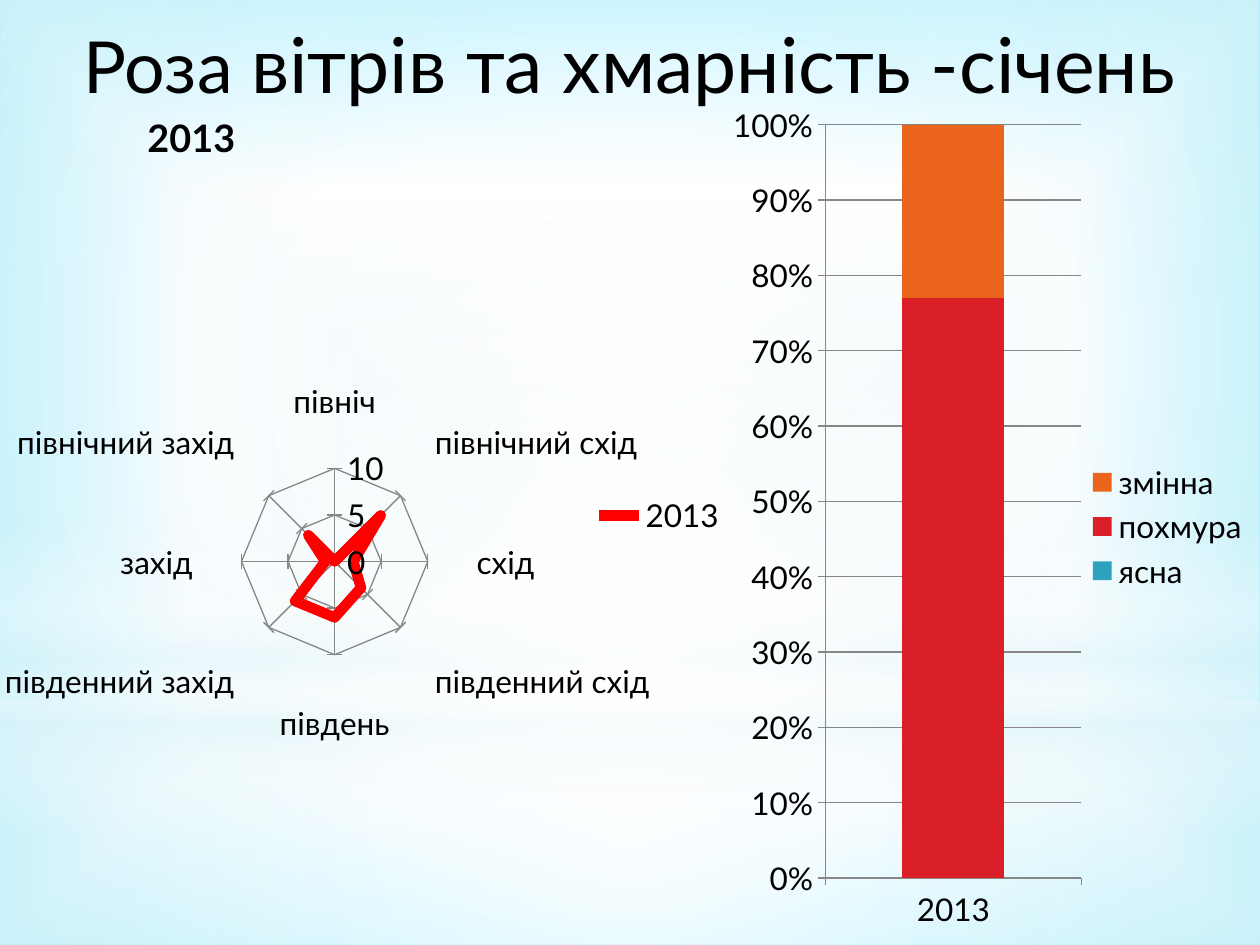
from lxml.etree import SubElement
from pptx import Presentation
from pptx.chart.data import CategoryChartData
from pptx.dml.color import RGBColor
from pptx.enum.chart import XL_CHART_TYPE, XL_LEGEND_POSITION, XL_TICK_MARK
from pptx.enum.shapes import MSO_SHAPE
from pptx.enum.text import MSO_ANCHOR, MSO_AUTO_SIZE, PP_ALIGN
from pptx.oxml.ns import qn
from pptx.oxml.xmlchemy import OxmlElement
from pptx.util import Inches, Pt

BLACK = RGBColor(0x00, 0x00, 0x00)
WHITE = RGBColor(0xFF, 0xFF, 0xFF)
GRAY = RGBColor(0x87, 0x87, 0x87)
RED = RGBColor(0xFF, 0x00, 0x00)
TEAL = RGBColor(0x2D, 0xA2, 0xBF)
CRIMSON = RGBColor(0xDA, 0x1F, 0x28)
ORANGE = RGBColor(0xEB, 0x64, 0x1B)
PALE = RGBColor(0xDE, 0xF5, 0xFA)
MIST = RGBColor(0xCD, 0xEF, 0xF7)
SKY = RGBColor(0x7C, 0xE7, 0xFF)


class SlideBuilder:
    font = "Lato"
    chart_size = Pt(18)

    def __init__(self, deck):
        self.page = deck.slides.add_slide(deck.slide_layouts[5])

    def paint(self, fill, properties, stops, shade=None):
        fill.solid()
        gradient = OxmlElement("a:gradFill")
        gradient.set("rotWithShape", "1")
        stop_list = SubElement(gradient, qn("a:gsLst"))
        for position, color, opacity in stops:
            stop = SubElement(stop_list, qn("a:gs"), pos=str(position * 1000))
            tint = SubElement(stop, qn("a:srgbClr"), val=str(color))
            if opacity < 100:
                SubElement(tint, qn("a:alpha"), val=str(opacity * 1000))
        if shade:
            center = SubElement(gradient, qn("a:path"))
            center.set("path", shade)
            edges = dict.fromkeys("ltrb", "50000")
            SubElement(center, qn("a:fillToRect"), **edges)
        else:
            SubElement(gradient, qn("a:lin"), ang="5400000", scaled="0")
        properties.replace(properties.find(qn("a:solidFill")), gradient)

    def background(self, stops):
        fill = self.page.background.fill
        fill.solid()
        properties = self.page.element.find(".//" + qn("p:bgPr"))
        self.paint(fill, properties, stops, "shape")

    def glow(self, kind, top, height, stops, shade="circle"):
        shape = self.page.shapes.add_shape(
            kind, Inches(0), Inches(top), Inches(10), Inches(height))
        shape.shadow.inherit = False
        shape.line.fill.background()
        self.paint(shape.fill, shape.element.spPr, stops, shade)

    def title(self, height, runs):
        title = self.page.shapes.title
        title.element.getparent().append(title.element)
        title.left, title.top = Inches(0), Inches(0)
        title.width, title.height = Inches(10), Inches(height)
        frame = title.text_frame
        frame.auto_size = MSO_AUTO_SIZE.NONE
        frame.vertical_anchor = MSO_ANCHOR.MIDDLE
        para = frame.paragraphs[0]
        para.alignment = PP_ALIGN.CENTER
        for text, size in runs:
            span = para.add_run()
            span.text = text
            self.style(span.font, Pt(size))

    def style(self, font, size):
        font.name = self.font
        font.size = size
        font.color.rgb = BLACK

    def chart(self, kind, place, categories, series, tick):
        data = CategoryChartData()
        data.categories = categories
        for name, values in series:
            data.add_series(name, values)
        chart = self.page.shapes.add_chart(kind, *map(Inches, place), data).chart
        self.style(chart.font, self.chart_size)
        chart.has_title = False
        chart.has_legend = True
        chart.legend.position = XL_LEGEND_POSITION.RIGHT
        chart.legend.include_in_layout = False
        for axis in (chart.category_axis, chart.value_axis):
            axis.major_tick_mark = tick
            axis.minor_tick_mark = XL_TICK_MARK.NONE
            axis.format.line.color.rgb = GRAY
            axis.format.line.width = Pt(0.75)
        grid = chart.value_axis.major_gridlines.format.line
        grid.color.rgb = GRAY
        grid.width = Pt(0.75)
        return chart

    def layout(self, parent, **values):
        old = parent.find(qn("c:layout"))
        if old is not None:
            parent.remove(old)
        layout = OxmlElement("c:layout")
        manual = SubElement(layout, qn("c:manualLayout"))
        for name, value in values.items():
            SubElement(manual, qn("c:" + name), val=str(value))
        return layout

    def cloud_chart(self, place, categories, series, colors):
        chart = self.chart(XL_CHART_TYPE.COLUMN_STACKED_100, place,
                           categories, series, XL_TICK_MARK.OUTSIDE)
        plot = chart.plots[0]
        plot.vary_by_categories = False
        plot.gap_width = 150
        plot.overlap = 100
        for item, color in zip(plot.series, colors):
            item.format.fill.solid()
            item.format.fill.fore_color.rgb = color
        labels = chart.value_axis.tick_labels
        labels.number_format = "0%"
        labels.number_format_is_linked = False
        area = chart.element.find(".//" + qn("c:plotArea"))
        area.insert(0, self.layout(
            area, layoutTarget="inner", xMode="edge", yMode="edge",
            x=0.18, y=0.02, w=0.48, h=0.9))

    def wind_chart(self, place, categories, series, color):
        chart = self.chart(XL_CHART_TYPE.RADAR, place,
                           categories, series, XL_TICK_MARK.CROSS)
        chart.plots[0].vary_by_categories = False
        line = chart.plots[0].series[0]
        line.smooth = False
        line.format.line.color.rgb = color
        line.format.line.width = Pt(6)
        chart.value_axis.minimum_scale = 0
        chart.value_axis.maximum_scale = 10
        chart.value_axis.major_unit = 5
        para = chart.chart_title.text_frame.paragraphs[0]
        span = para.add_run()
        span.text = series[0][0]
        self.style(span.font, Pt(21.6))
        span.font.bold = True
        heading = chart.element.find(".//" + qn("c:title"))
        heading.find(qn("c:tx")).addnext(self.layout(
            heading, xMode="edge", yMode="edge", x=0.19, y=0.02))


def main():
    deck = Presentation()
    deck.slide_width, deck.slide_height = Inches(10), Inches(7.5)
    slide = SlideBuilder(deck)
    slide.background([(0, MIST, 45), (60, WHITE, 100), (100, SKY, 100)])
    slide.glow(MSO_SHAPE.RECTANGLE, 5.58, 1.92,
               [(0, WHITE, 91), (37, WHITE, 76), (100, PALE, 79)])
    slide.glow(MSO_SHAPE.RECTANGLE, 0, 5.58,
               [(0, WHITE, 89), (48, WHITE, 62), (100, PALE, 79)])
    slide.glow(MSO_SHAPE.RECTANGLE, 4.12, 2.5,
               [(0, WHITE, 0), (29, WHITE, 30), (45, PALE, 40),
                (55, WHITE, 26), (65, PALE, 60), (100, WHITE, 0)], None)
    slide.glow(MSO_SHAPE.OVAL, 1.75, 5.58, [(0, WHITE, 100), (56, WHITE, 0)])
    slide.title(0.99, [("Роза ", 41), ("вітрів та хмарність -січень", 44)])
    slide.cloud_chart(
        (5.79, 0.84, 4.23, 6.66), ["2013"],
        [("ясна", [0]), ("похмура", [77]), ("змінна", [23])],
        [TEAL, CRIMSON, ORANGE])
    slide.wind_chart(
        (0, 0.68, 5.87, 6.82),
        ["північ", "північний схід", "схід", "південний схід",
         "південь", "південний захід", "захід", "північний захід"],
        [("2013", [0, 7, 2, 4, 6, 6, 1, 4])], RED)
    deck.save("out.pptx")


if __name__ == "__main__":
    main()
